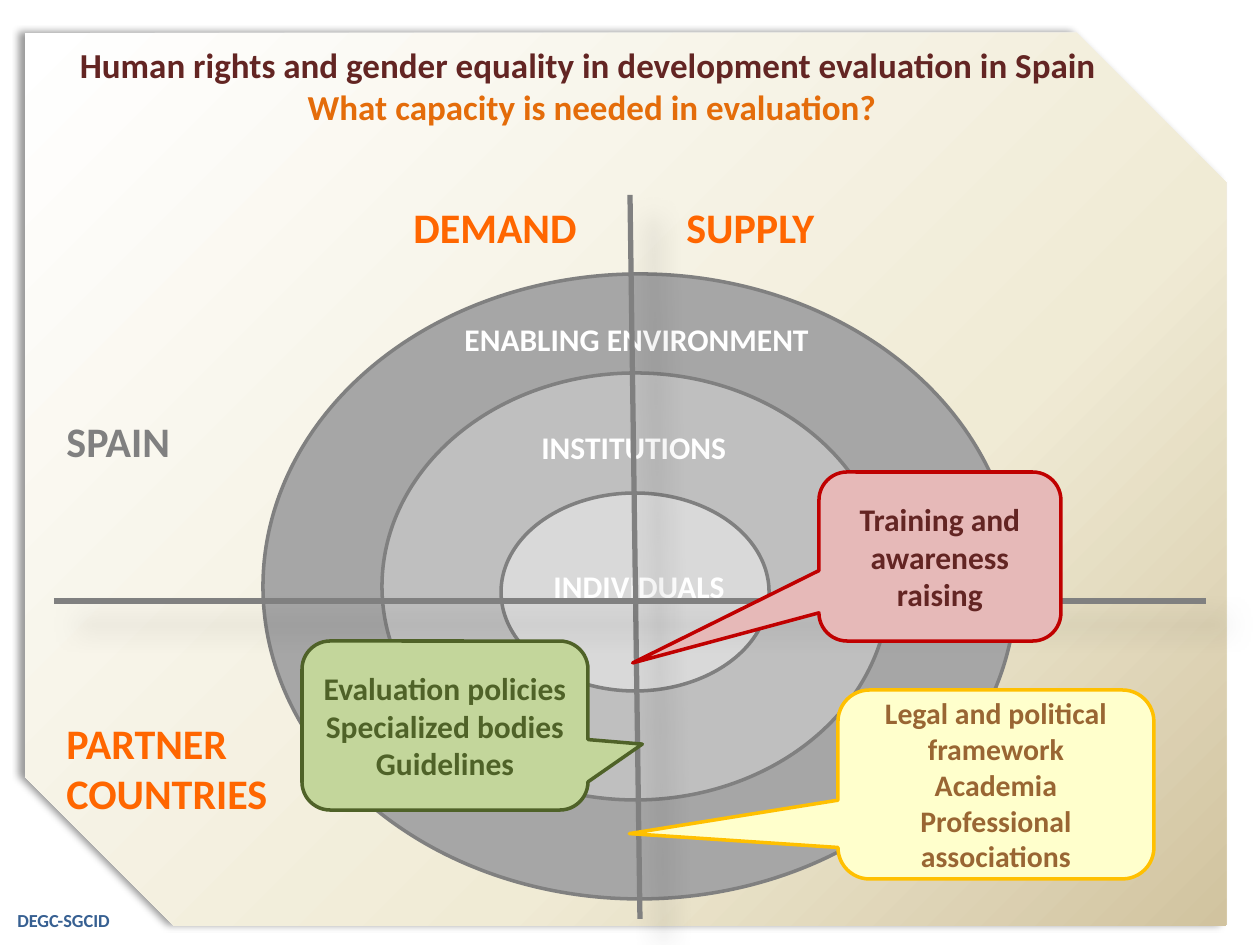
from pptx import Presentation
from pptx import util as u
from pptx.dml.color import RGBColor
from pptx.enum import shapes, text
from pptx.oxml import parse_xml
from pptx.oxml.ns import nsdecls

PX = 914400 / 126
FONT = "Calibri"
WHITE = RGBColor(0xFF, 0xFF, 0xFF)
CREAM = RGBColor(0xF0, 0xEB, 0xD5)
SAND = RGBColor(0xD1, 0xC3, 0x9F)
BLACK = RGBColor(0, 0, 0)
BLUE = RGBColor(0x37, 0x60, 0x92)
GRAY = RGBColor(0x80, 0x80, 0x80)
OUTER_GRAY = RGBColor(0xA6, 0xA6, 0xA6)
MIDDLE_GRAY = RGBColor(0xBF, 0xBF, 0xBF)
INNER_GRAY = RGBColor(0xD9, 0xD9, 0xD9)
BRIGHT_ORANGE = RGBColor(0xFF, 0x66, 0x00)
ORANGE = RGBColor(0xE4, 0x6C, 0x0A)
MAROON = RGBColor(0x63, 0x25, 0x23)
BROWN = RGBColor(0x99, 0x66, 0x33)
GOLD = RGBColor(0xFF, 0xC0, 0x00)
PALE_YELLOW = RGBColor(0xFF, 0xFF, 0xCC)
RED = RGBColor(0xC0, 0x00, 0x00)
PINK = RGBColor(0xE6, 0xB9, 0xB8)
DARK_GREEN = RGBColor(0x4F, 0x62, 0x28)
LIGHT_GREEN = RGBColor(0xC3, 0xD6, 0x9B)


def emu(*pixels):
    return [u.Emu(round(value * PX)) for value in pixels]


def set_shadow(shape, alpha, blur, distance, angle):
    """Give an outer shadow: alpha in percent, lengths in points, angle in degrees."""
    effects = shape._element.spPr.get_or_add_effectLst()
    effects.append(parse_xml(
        f'<a:outerShdw {nsdecls("a")} blurRad="{u.Pt(blur)}" dist="{u.Pt(distance)}" '
        f'dir="{angle * 60000}" algn="ctr" rotWithShape="0"><a:srgbClr val="{BLACK}">'
        f'<a:alpha val="{alpha * 1000}"/></a:srgbClr></a:outerShdw>'))


def write_lines(frame, lines, size, color, align=text.PP_ALIGN.LEFT):
    frame.text = "\n".join(lines)
    for paragraph in frame.paragraphs:
        paragraph.alignment = align
        for run in paragraph.runs:
            run.font.name = FONT
            run.font.size = u.Pt(size)
            run.font.bold = True
            run.font.color.rgb = color


def add_label(slide, box, lines, size, color):
    frame = slide.shapes.add_textbox(*emu(*box)).text_frame
    frame.word_wrap = False
    frame.auto_size = text.MSO_AUTO_SIZE.SHAPE_TO_FIT_TEXT
    write_lines(frame, lines, size, color)


def add_title(slide, box, heading, question):
    frame = slide.shapes.add_textbox(*emu(*box)).text_frame
    frame.word_wrap = True
    write_lines(frame, [f"{heading} \v{question}"], 20, MAROON, text.PP_ALIGN.CENTER)
    frame.paragraphs[0].runs[-1].font.color.rgb = ORANGE


def add_filled_shape(slide, kind, box, fill, line):
    shape = slide.shapes.add_shape(kind, *emu(*box))
    shape.shadow.inherit = False
    shape.fill.solid()
    shape.fill.fore_color.rgb = fill
    shape.line.color.rgb = line
    shape.line.width = u.Pt(2)
    return shape


def add_panel(slide, box):
    """Add the snipped background panel with its diagonal gradient."""
    panel = slide.shapes.add_shape(shapes.MSO_SHAPE.SNIP_2_DIAG_RECTANGLE, *emu(*box))
    panel.adjustments[0] = 0
    panel.adjustments[1] = 0.167
    panel.line.fill.background()
    panel.fill.gradient()
    panel.fill.gradient_angle = 315
    stops = panel._element.spPr.gradFill.gsLst
    for stop in list(stops):
        stops.remove(stop)
    for position, color in ((0, WHITE), (65, CREAM), (100, SAND)):
        stops.append(parse_xml(f'<a:gs {nsdecls("a")} pos="{position * 1000}">'
                               f'<a:srgbClr val="{color}"/></a:gs>'))
    set_shadow(panel, 40, 4, 3, 180)


def add_axis(slide, ends):
    axis = slide.shapes.add_connector(shapes.MSO_CONNECTOR.STRAIGHT, *emu(*ends))
    axis.line.color.rgb = GRAY
    axis.line.width = u.Pt(3)
    set_shadow(axis, 26, 15, 18, 45)


def add_callout(slide, box, tip, lines, size, colors):
    """Add a callout; tip is the pointer's offset from the centre, as shares of the size."""
    fill, line, font_color = colors
    kind = shapes.MSO_SHAPE.ROUNDED_RECTANGULAR_CALLOUT
    callout = add_filled_shape(slide, kind, box, fill, line)
    for index, value in enumerate((*tip, 0.167)):
        callout.adjustments[index] = value
    frame = callout.text_frame
    frame.word_wrap = True
    frame.vertical_anchor = text.MSO_ANCHOR.MIDDLE
    write_lines(frame, lines, size, font_color, text.PP_ALIGN.CENTER)


def main():
    presentation = Presentation()
    presentation.slide_width, presentation.slide_height = emu(1260, 945)
    slide = presentation.slides.add_slide(presentation.slide_layouts[6])

    add_label(slide, (5, 903, 139, 35), ["DEGC-SGCID"], 10.5, BLUE)
    add_panel(slide, (25, 33, 1201, 893))

    for box, fill in (((263, 274, 753, 625), OUTER_GRAY),
                      ((382, 373, 507, 427), MIDDLE_GRAY),
                      ((501, 493, 268, 198), INNER_GRAY)):
        add_filled_shape(slide, shapes.MSO_SHAPE.OVAL, box, fill, GRAY)
    for box, level in (((452, 314, 373, 50), "ENABLING ENVIRONMENT"),
                       ((529, 422, 212, 50), "INSTITUTIONS"),
                       ((541, 561, 198, 50), "INDIVIDUALS")):
        add_label(slide, box, [level], 18, WHITE)

    add_axis(slide, (630, 195, 640, 919))
    add_axis(slide, (54, 601, 1206, 601))
    for box, lines, color in (
            ((401, 195, 190, 64), ["DEMAND"], BRIGHT_ORANGE),
            ((674, 195, 155, 64), ["SUPPLY"], BRIGHT_ORANGE),
            ((54, 711, 228, 115), ["PARTNER", "COUNTRIES"], BRIGHT_ORANGE),
            ((54, 409, 130, 63), ["SPAIN"], GRAY)):
        add_label(slide, box, lines, 24, color)

    add_callout(slide, (838, 690, 316, 189), (-1.16, 0.26),
                ["Legal and political framework", "Academia", "Professional associations"],
                17, (PALE_YELLOW, GOLD, BROWN))
    add_callout(slide, (819, 472, 242, 169), (-1.27, 0.63),
                ["Training and awareness raising"], 18, (PINK, RED, MAROON))
    add_callout(slide, (302, 641, 286, 169), (0.69, 0.11),
                ["Evaluation policies", "Specialized bodies", "Guidelines"],
                18, (LIGHT_GREEN, DARK_GREEN, DARK_GREEN))

    add_title(slide, (25, 37, 1134, 117),
              "Human rights and gender equality in development evaluation in Spain",
              "What capacity is needed in evaluation?")
    presentation.save("out.pptx")


if __name__ == "__main__":
    main()
